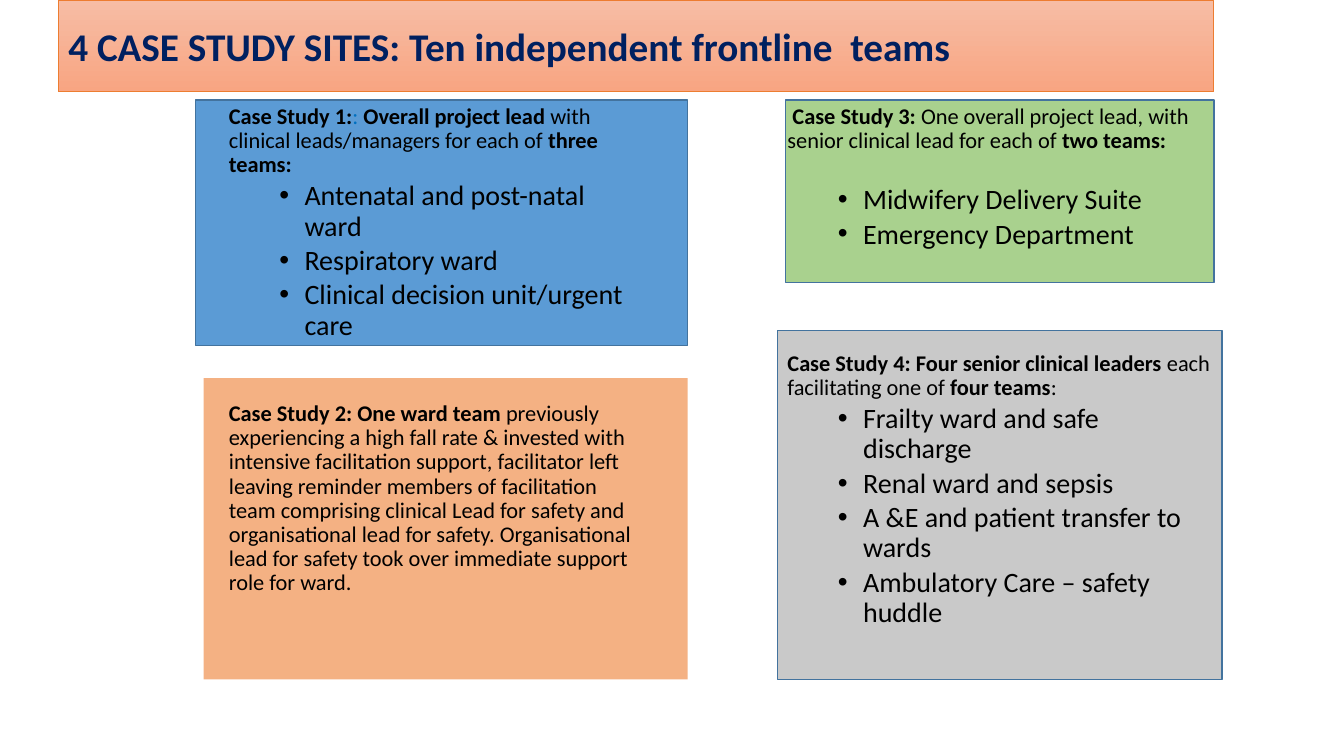
from collections import namedtuple
from dataclasses import dataclass

from lxml import etree
from pptx import Presentation
from pptx import util as u
from pptx.dml.color import RGBColor
from pptx.enum import shapes, text
from pptx.oxml.ns import qn


@dataclass(frozen=True)
class Theme:
    """Colours and type sizes of the slide."""
    font: str = "Calibri"
    title_size: int = 28
    lead_size: int = 16
    team_size: int = 20
    title_ink: str = "002060"
    title_line: str = "ED7D31"
    title_fade: tuple = ("F7BDA5", "F8A582")
    ink: str = "000000"
    accent: str = "0070C0"
    card_line: str = "43739E"
    blue: str = "5B9BD5"
    orange: str = "F4B183"
    green: str = "A9D18E"
    grey: str = "C9C9C9"


THEME = Theme()
WIDTH, HEIGHT = u.Inches(13.33), u.Inches(7.5)
Box = namedtuple("Box", "left top width height")
Inset = namedtuple("Inset", "left top right")
Card = namedtuple("Card", "box inset fill line lead teams gap")

TITLE = "4 CASE STUDY SITES: Ten independent frontline  teams"
CARDS = [
    Card(Box(14.55, 13.2, 36.61, 32.53), Inset(2.48, 0.67, 3.68), THEME.blue, THEME.card_line,
         [("Case Study 1:", True, THEME.ink), (": ", False, THEME.accent),
          ("Overall project lead ", True, THEME.ink),
          ("with clinical leads/managers for each of ", False, THEME.ink),
          ("three teams:", True, THEME.ink)],
         ["Antenatal and post-natal ward", "Respiratory ward",
          "Clinical decision unit/urgent care"], 3),
    Card(Box(15.15, 50, 36.01, 39.87), Inset(1.88, 3.2, 3.68), THEME.orange, None,
         [("Case Study 2: One ward team ", True, THEME.ink),
          ("previously experiencing a high fall rate & invested with intensive "
           "facilitation support, facilitator left leaving reminder members of "
           "facilitation team comprising clinical Lead for safety and organisational "
           "lead for safety. Organisational lead for safety took over immediate "
           "support role for ward.", False, THEME.ink)], [], 3),
    Card(Box(58.44, 13.2, 31.88, 24.13), Inset(0.15, 0.67, 0.15), THEME.green, THEME.card_line,
         [(" Case Study 3:", True, THEME.ink),
          (" One overall project lead, with senior clinical lead for each of ", False, THEME.ink),
          ("two teams:", True, THEME.ink)],
         ["Midwifery Delivery Suite", "Emergency Department"], 23),
    Card(Box(57.84, 43.73, 33.08, 46.13), Inset(0.75, 2.8, 0.75), THEME.grey, THEME.card_line,
         [("Case Study 4: Four senior clinical leaders", True, THEME.ink),
          (" each facilitating one of ", False, THEME.ink),
          ("four teams", True, THEME.ink), (":", False, THEME.ink)],
         ["Frailty ward and safe discharge", "Renal ward and sepsis",
          "A &E and patient transfer to wards", "Ambulatory Care – safety huddle"], 3),
]


def across(share):
    """Turn a percentage of the slide width into a length."""
    return round(WIDTH * share / 100)


def down(share):
    """Turn a percentage of the slide height into a length."""
    return round(HEIGHT * share / 100)


def add_panel(page, box, line, weight):
    """Add an unshadowed rectangle with wrapping text."""
    panel = page.shapes.add_shape(shapes.MSO_SHAPE.RECTANGLE, across(box.left), down(box.top),
                                  across(box.width), down(box.height))
    panel.shadow.inherit = False
    panel.text_frame.word_wrap = True
    if line:
        panel.line.color.rgb = RGBColor.from_string(line)
        panel.line.width = u.Pt(weight)
    else:
        panel.line.fill.background()
    return panel


def add_span(para, words, size, bold, ink):
    """Append a formatted run to a paragraph."""
    span = para.add_run()
    span.text = words
    span.font.name = THEME.font
    span.font.size = u.Pt(size)
    span.font.bold = bold
    span.font.color.rgb = RGBColor.from_string(ink)


def set_spacing(para, before):
    """Align a paragraph left with tight lines and a gap above."""
    para.alignment = text.PP_ALIGN.LEFT
    para.line_spacing = 0.9
    para.space_before = u.Pt(before)


def add_bullet(para):
    """Give a paragraph a hanging round bullet."""
    props = para._p.get_or_add_pPr()
    props.set("marL", str(u.Inches(0.75)))
    props.set("indent", str(u.Inches(-0.25)))
    etree.SubElement(props, qn("a:buFont")).set("typeface", "Arial")
    etree.SubElement(props, qn("a:buChar")).set("char", "•")


def add_title(page, box):
    """Draw the title banner in the given box."""
    banner = add_panel(page, box, THEME.title_line, 0.5)
    banner.fill.gradient()
    banner.fill.gradient_angle = 270
    for stop, colour, position in zip(banner.fill.gradient_stops, THEME.title_fade, (0, 1)):
        stop.color.rgb = RGBColor.from_string(colour)
        stop.position = position
    banner.text_frame.vertical_anchor = text.MSO_ANCHOR.MIDDLE
    para = banner.text_frame.paragraphs[0]
    para.alignment = text.PP_ALIGN.LEFT
    add_span(para, TITLE, THEME.title_size, True, THEME.title_ink)


def add_card(page, card):
    """Draw one case study with its lead text and list of teams."""
    panel = add_panel(page, card.box, card.line, 1)
    panel.fill.solid()
    panel.fill.fore_color.rgb = RGBColor.from_string(card.fill)
    frame = panel.text_frame
    frame.vertical_anchor = text.MSO_ANCHOR.TOP
    frame.margin_left = across(card.inset.left)
    frame.margin_right = across(card.inset.right)
    frame.margin_top = down(card.inset.top)
    frame.margin_bottom = 0
    lead = frame.paragraphs[0]
    set_spacing(lead, 3)
    for words, bold, ink in card.lead:
        add_span(lead, words, THEME.lead_size, bold, ink)
    for index, team in enumerate(card.teams):
        para = frame.add_paragraph()
        set_spacing(para, 3 if index else card.gap)
        add_bullet(para)
        add_span(para, team, THEME.team_size, False, THEME.ink)


def main():
    """Build and save the deck."""
    deck = Presentation()
    deck.slide_width, deck.slide_height = WIDTH, HEIGHT
    page = deck.slides.add_slide(deck.slide_layouts[6])
    add_title(page, Box(4.35, 0, 85.97, 12.13))
    for card in CARDS:
        add_card(page, card)
    deck.save("out.pptx")


if __name__ == "__main__":
    main()
